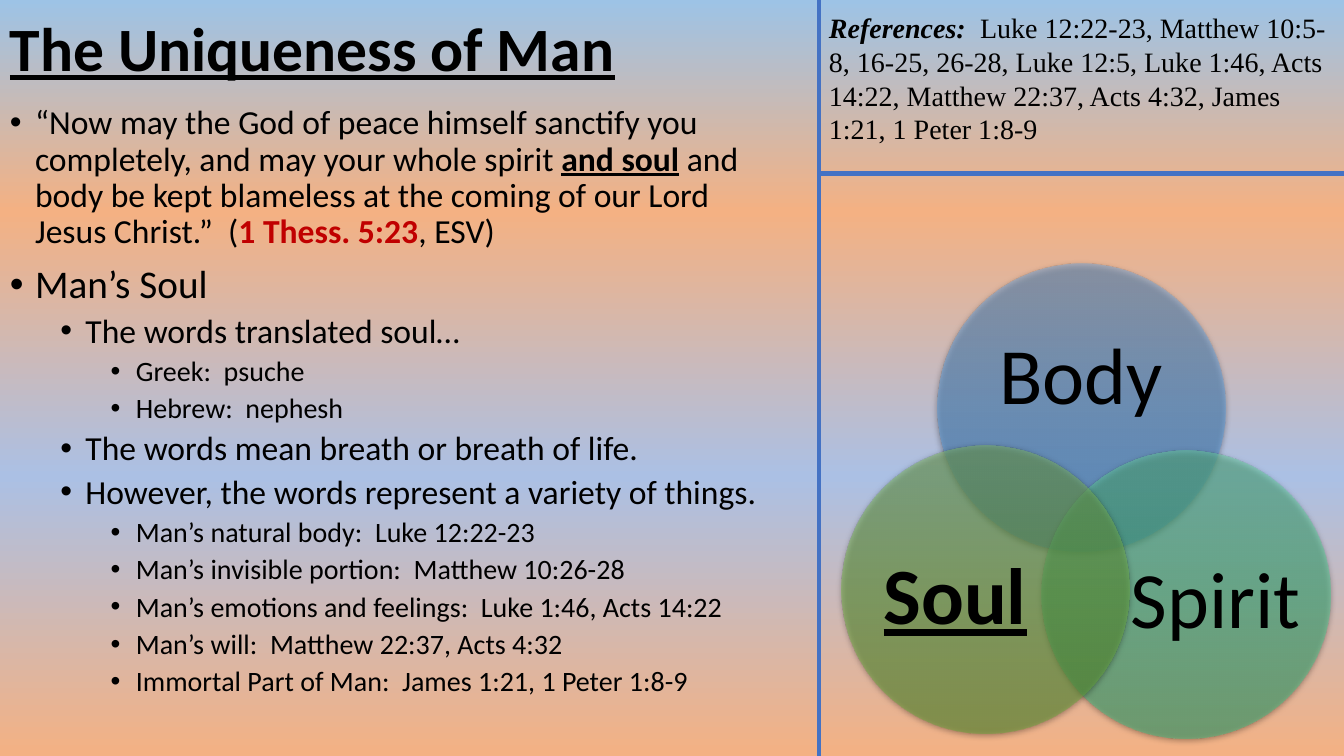
from lxml import etree
from pptx import Presentation
from pptx.dml.color import RGBColor
from pptx.enum.shapes import MSO_CONNECTOR, MSO_SHAPE
from pptx.enum.text import MSO_ANCHOR, PP_ALIGN
from pptx.oxml.ns import qn
from pptx.util import Cm, Pt

STRAIGHT = MSO_CONNECTOR.STRAIGHT
OVAL = MSO_SHAPE.OVAL
TOP, MIDDLE = MSO_ANCHOR.TOP, MSO_ANCHOR.MIDDLE
CENTER = PP_ALIGN.CENTER

BLACK = RGBColor(0x00, 0x00, 0x00)
VERSE_RED = RGBColor(0xC0, 0x00, 0x00)
DIVIDER_BLUE = RGBColor(0x44, 0x72, 0xC4)
SKY = RGBColor(0x9D, 0xC3, 0xE6)
PEACH = RGBColor(0xF4, 0xB1, 0x83)
PERIWINKLE = RGBColor(0xAB, 0xC0, 0xE4)
BODY_BLUES = RGBColor(0x71, 0xA6, 0xDB), RGBColor(0x55, 0x9B, 0xDB), RGBColor(0x44, 0x8A, 0xCA)
SPIRIT_GREENS = RGBColor(0x67, 0xCC, 0x9A), RGBColor(0x47, 0xCB, 0x8E), RGBColor(0x39, 0xBB, 0x7F)
SOUL_GREENS = RGBColor(0x81, 0xB8, 0x61), RGBColor(0x6F, 0xB2, 0x42), RGBColor(0x62, 0xA3, 0x36)

SLIDE_W, SLIDE_H = 33.87, 19.05
DIVIDER_X, DIVIDER_Y = 20.64, 4.37
CIRCLE = 7.26

# Circle offset in the diagram, then label box within the circle (cm)
CIRCLES = [
    ("Body", BODY_BLUES, (2.41, 0), (0.97, 1.27, 5.31, 3.25)),
    ("Spirit", SPIRIT_GREENS, (5.05, 4.7), (2.21, 1.85, 4.34, 3.99)),
    ("Soul", SOUL_GREENS, (0, 4.57), (0.69, 1.88, 4.34, 3.99)),
]

VERSE = [
    ("“Now may the God of peace himself sanctify you completely, and may your whole spirit ", {}),
    ("and soul", {"bold": True, "underline": True}),
    (" and body be kept blameless at the coming of our Lord Jesus Christ.”  (", {}),
    ("1 Thess. 5:23", {"bold": True, "color": VERSE_RED}),
    (", ESV)", {}),
]
# Indent level, size, runs
OUTLINE = [(0, 24, VERSE)] + [
    (level, size, [(text, {})]) for level, size, text in [
        (0, 28, "Man’s Soul"),
        (1, 24, "The words translated soul…"),
        (2, 20, "Greek:  psuche"),
        (2, 20, "Hebrew:  nephesh"),
        (1, 24, "The words mean breath or breath of life."),
        (1, 24, "However, the words represent a variety of things."),
        (2, 20, "Man’s natural body:  Luke 12:22-23"),
        (2, 20, "Man’s invisible portion:  Matthew 10:26-28"),
        (2, 20, "Man’s emotions and feelings:  Luke 1:46, Acts 14:22"),
        (2, 20, "Man’s will:  Matthew 22:37, Acts 4:32"),
        (2, 20, "Immortal Part of Man:  James 1:21, 1 Peter 1:8-9"),
    ]
]
REFERENCES = [
    ("References:  ", {"bold": True, "italic": True}),
    ("Luke 12:22-23, Matthew 10:5-8, 16-25, 26-28, Luke 12:5, Luke 1:46, Acts 14:22, "
     "Matthew 22:37, Acts 4:32, James 1:21, 1 Peter 1:8-9", {}),
]


def sub(parent, tag, **attributes):
    return etree.SubElement(parent, qn(tag), {k: str(v) for k, v in attributes.items()})


def fill_downward(fill, element, stops, opacity=100):
    """Fill with a top-to-bottom gradient of (percent, colour) stops."""
    fill.gradient()
    fill.gradient_angle = 270
    stop_list = element.find(".//" + qn("a:gsLst"))
    for old_stop in list(stop_list):
        stop_list.remove(old_stop)
    for percent, color in stops:
        stop = sub(stop_list, "a:gs", pos=percent * 1000)
        rgb = sub(stop, "a:srgbClr", val=color)
        if opacity < 100:
            sub(rgb, "a:alpha", val=opacity * 1000)


def add_text_frame(slide, left, top, width, height, anchor=TOP):
    frame = slide.shapes.add_textbox(Cm(left), Cm(top), Cm(width), Cm(height)).text_frame
    frame.word_wrap = True
    frame.vertical_anchor = anchor
    return frame


def write(paragraph, runs, size, font_name="Calibri"):
    paragraph.font.name = font_name
    paragraph.font.size = Pt(size)
    paragraph.font.color.rgb = BLACK
    for text, style in runs:
        run = paragraph.add_run()
        run.text = text
        run.font.bold = style.get("bold")
        run.font.italic = style.get("italic")
        run.font.underline = style.get("underline")
        if "color" in style:
            run.font.color.rgb = style["color"]


def add_title(slide, left, top, width, height):
    title = add_text_frame(slide, left, top, width, height, MIDDLE).paragraphs[0]
    title.line_spacing = 0.9
    write(title, [("The Uniqueness of Man", {"bold": True, "underline": True})], 44)


def add_references(slide, left, top, width, height):
    references = add_text_frame(slide, left, top, width, height).paragraphs[0]
    write(references, REFERENCES, 20, "Times New Roman")


def add_outline(slide, left, top, width, height):
    frame = add_text_frame(slide, left, top, width, height)
    for index, (level, size, runs) in enumerate(OUTLINE):
        point = frame.add_paragraph() if index else frame.paragraphs[0]
        point.level = level
        point.line_spacing = 0.9
        if index:
            point.space_before = Pt(5 if level else 10)
        properties = point._p.get_or_add_pPr()
        properties.set("marL", str(Cm(0.635 + 1.27 * level)))
        properties.set("indent", str(-Cm(0.635)))
        sub(properties, "a:buFont", typeface="Arial")
        sub(properties, "a:buChar", char="•")
        write(point, runs, size)


def add_circle(slide, left, top, colors):
    circle = slide.shapes.add_shape(OVAL, Cm(left), Cm(top), Cm(CIRCLE), Cm(CIRCLE))
    fill_downward(circle.fill, circle._element, zip((0, 50, 100), colors), opacity=50)
    circle.line.fill.background()
    circle.shadow.inherit = False
    effects = circle._element.spPr.find(qn("a:effectLst"))
    shadow = sub(effects, "a:outerShdw", blurRad=Pt(4.5), dist=Pt(1.5),
                 dir=90 * 60000, algn="ctr", rotWithShape=0)
    sub(sub(shadow, "a:srgbClr", val=BLACK), "a:alpha", val=63000)


def add_venn(slide, left, top):
    for name, colors, (dx, dy), (label_dx, label_dy, width, height) in CIRCLES:
        x, y = left + dx, top + dy
        add_circle(slide, x, y, colors)
        frame = add_text_frame(slide, x + label_dx, y + label_dy, width, height, MIDDLE)
        frame.margin_left = frame.margin_right = frame.margin_top = frame.margin_bottom = 0
        label = frame.paragraphs[0]
        label.alignment = CENTER
        label.line_spacing = 0.9
        emphasis = {"bold": True, "underline": True} if name == "Soul" else {}
        write(label, [(name, emphasis)], 57)


def add_divider(slide, x1, y1, x2, y2):
    divider = slide.shapes.add_connector(STRAIGHT, Cm(x1), Cm(y1), Cm(x2), Cm(y2))
    divider.line.color.rgb = DIVIDER_BLUE
    divider.line.width = Pt(3)
    sub(divider._element.spPr, "a:effectLst")


def main():
    deck = Presentation()
    deck.slide_width, deck.slide_height = Cm(SLIDE_W), Cm(SLIDE_H)
    slide = deck.slides.add_slide(deck.slide_layouts[6])
    fill_downward(slide.background.fill, slide._element,
                  [(0, SKY), (28, PEACH), (63, PERIWINKLE), (100, PEACH)])
    add_references(slide, DIVIDER_X, 0.15, SLIDE_W - DIVIDER_X, 3.68)
    add_title(slide, 0, 0.05, 21.92, 2.49)
    add_venn(slide, 21.21, 6.65)
    add_outline(slide, 0, 2.54, 20.07, 16.46)
    add_divider(slide, DIVIDER_X, DIVIDER_Y, SLIDE_W, DIVIDER_Y)
    add_divider(slide, DIVIDER_X, 0, DIVIDER_X, SLIDE_H)
    deck.save("out.pptx")


if __name__ == "__main__":
    main()
